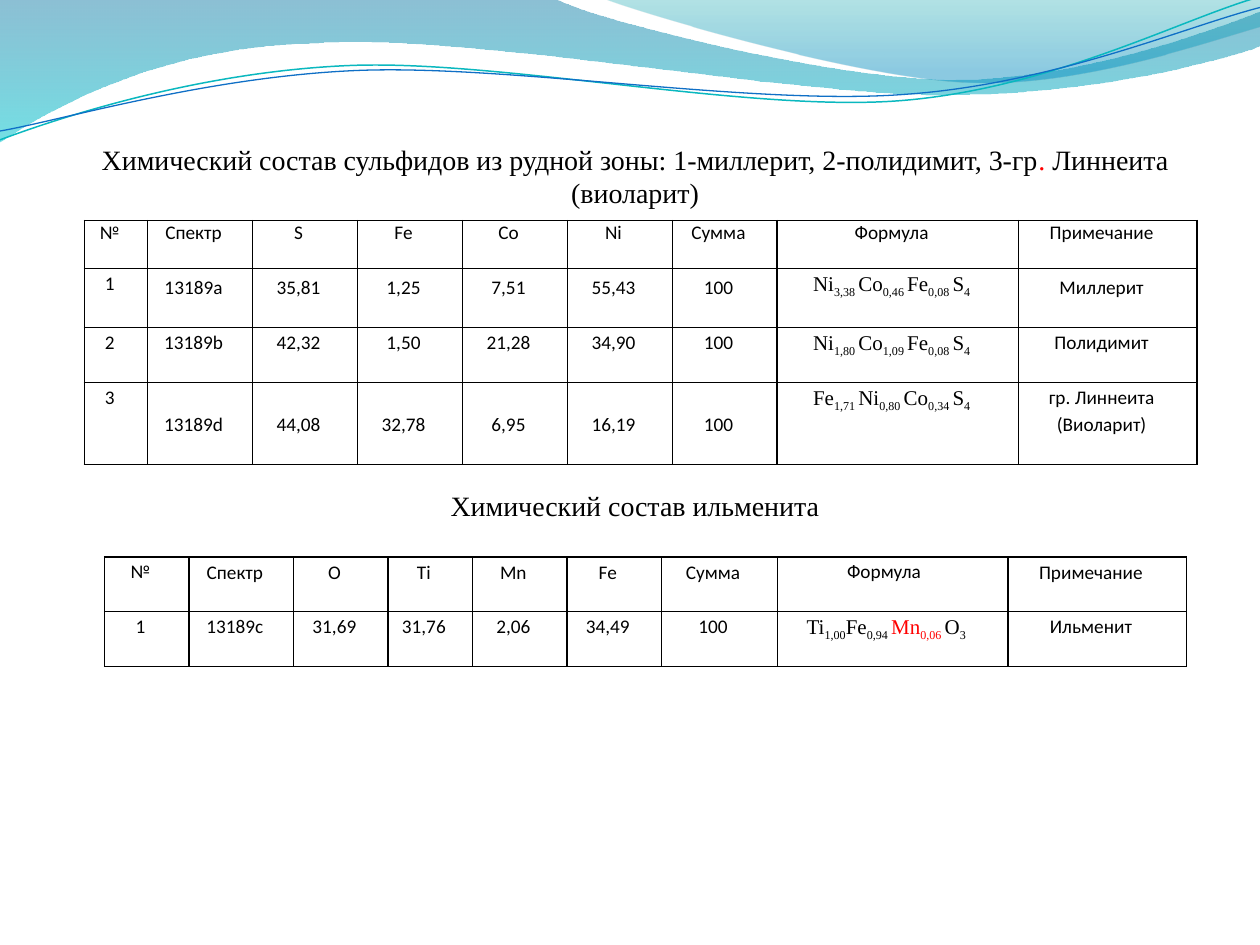
from math import cos, radians, sin

from lxml import etree
from pptx import Presentation
from pptx.dml.color import RGBColor
from pptx.enum.text import MSO_ANCHOR, PP_ALIGN
from pptx.oxml.ns import qn
from pptx.util import Inches, Pt

CENTER = PP_ALIGN.CENTER
TOP, BOTTOM = MSO_ANCHOR.TOP, MSO_ANCHOR.BOTTOM
COLORS = {
    "text": "000000", "accent": "FF0000", "teal_line": "0AB8BF", "blue_line": "0F6FC6",
    "back_top": "0074A1", "back_bottom": "00C6CF",
    "front_top": "00A1A9", "front_bottom": "008BBF",
}
SERIF, SANS = "Times New Roman", "Calibri"
TILT = 2.7

BACK_WAVE = [
    (0, 0), (4.4, -0.01), (4.76, 0.17, 6.64, 0.63, 7.58, 0.63),
    (8.53, 0.63, 9.58, 0.26, 10, 0.09), (10.01, 0.36),
    (9.83, 0.44, 8.7, 0.76, 7.46, 0.75), (6.22, 0.75, 3.82, 0.28, 2.57, 0.34),
    (1.29, 0.36, 0.46, 0.83, -0.01, 1.13), (0, 0),
]
FRONT_WAVE = [
    (4.79, -0.01), (5.09, 0.11, 6.82, 0.62, 7.69, 0.65),
    (8.56, 0.69, 9.61, 0.32, 10, 0.21), (10, 0), (4.79, -0.01),
]
TEAL_CURVE = [
    (0, 1.11), (0.48, 0.93, 1.58, 0.57, 2.77, 0.52),
    (3.95, 0.47, 5.93, 0.89, 7.13, 0.8), (8.33, 0.71, 9.38, 0.15, 9.98, -0.02),
]
BLUE_CURVE = [
    (0, 1.04), (0.47, 0.96, 1.64, 0.61, 2.83, 0.56),
    (4.03, 0.51, 5.97, 0.84, 7.17, 0.75), (8.36, 0.67, 9.41, 0.21, 10, 0.06),
]


def color(name):
    return RGBColor.from_string(COLORS[name])


def write_text(frame, paragraphs, size=11, font=SANS, spacing=1.0):
    for index, runs in enumerate(paragraphs):
        paragraph = frame.paragraphs[0] if index == 0 else frame.add_paragraph()
        paragraph.alignment = CENTER
        paragraph.line_spacing = spacing
        for text, color_name, baseline in runs:
            run = paragraph.add_run()
            run.text = text
            run.font.size = Pt(size)
            run.font.name = font
            run.font.color.rgb = color(color_name)
            if baseline:
                run._r.get_or_add_rPr().set("baseline", str(baseline * 1000))


def plain(text, color_name="text"):
    return (text, color_name, 0)


def formula(*parts, accent=None):
    runs = []
    for element, amount in parts:
        color_name = "accent" if element == accent else "text"
        runs += [(element, color_name, 0), (amount, color_name, -25)]
    return runs


def add_outline(slide, segments, close):
    points = [pair for segment in segments for pair in zip(segment[::2], segment[1::2])]
    points = [(Inches(x), Inches(y)) for x, y in points]
    builder = slide.shapes.build_freeform(*points[0])
    builder.add_line_segments(points[1:], close=close)
    shape = builder.convert_to_shape()
    shape.shadow.inherit = False
    steps = list(shape._element.spPr.iter(qn("a:lnTo")))
    for segment in segments[1:]:
        step = steps.pop(0)
        if len(segment) == 6:
            curve = etree.Element(qn("a:cubicBezTo"))
            step.addprevious(curve)
            for line in [step, steps.pop(0), steps.pop(0)]:
                curve.append(line[0])
                line.getparent().remove(line)
    return shape


def add_wave(slide, segments, stops):
    shape = add_outline(slide, segments, True)
    shape.line.fill.background()
    shape.fill.gradient()
    shape.fill.gradient_angle = 270
    for stop, (position, color_name, opacity) in zip(shape.fill.gradient_stops, stops):
        stop.position = position
        stop.color.rgb = color(color_name)
    for element, (_, _, opacity) in zip(shape._element.spPr.iter(qn("a:srgbClr")), stops):
        etree.SubElement(element, qn("a:alpha"), val=str(opacity * 1000))


def tilt(segments, center_x, center_y):
    cosine, sine = cos(radians(TILT)), sin(radians(TILT))
    tilted = []
    for segment in segments:
        values = []
        for x, y in zip(segment[::2], segment[1::2]):
            across, down = x - center_x, y - center_y
            values += [center_x + across * cosine - down * sine,
                       center_y + across * sine + down * cosine]
        tilted.append(values)
    return tilted


def add_curve(slide, segments, center, color_name, width):
    shape = add_outline(slide, tilt(segments, *center), False)
    shape.rotation = 360 - TILT
    shape.fill.background()
    shape.line.color.rgb = color(color_name)
    shape.line.width = Pt(width)


def add_title(slide, box, runs):
    frame = slide.shapes.add_textbox(*map(Inches, box)).text_frame
    frame.word_wrap = True
    write_text(frame, [runs], size=16, font=SERIF)


def set_borders(cell):
    properties = cell._tc.get_or_add_tcPr()
    for side in ("lnL", "lnR", "lnT", "lnB"):
        line = etree.SubElement(properties, qn(f"a:{side}"), w=str(Pt(1)))
        fill = etree.SubElement(line, qn("a:solidFill"))
        etree.SubElement(fill, qn("a:srgbClr"), val=COLORS["text"])


def fill_cell(cell, content, top_anchored, spacing):
    set_borders(cell)
    cell.fill.background()
    cell.margin_left, cell.margin_right = Inches(0.02), Inches(0.12)
    cell.margin_top = 0
    cell.margin_bottom = 0 if top_anchored else Inches(0.19 * spacing)
    cell.vertical_anchor = TOP if top_anchored else BOTTOM
    if isinstance(content, list):
        write_text(cell.text_frame, [content], size=12, font=SERIF, spacing=spacing)
    else:
        paragraphs = [[plain(line)] for line in content.split("\n")]
        write_text(cell.text_frame, paragraphs, spacing=spacing)


def add_grid(slide, left, top, widths, heights, rows, header_spacing):
    frame = slide.shapes.add_table(
        len(rows), len(widths), Inches(left), Inches(top),
        Inches(sum(widths)), Inches(sum(heights)),
    )
    table = frame.table
    table.first_row = table.horz_banding = False
    for column, width in zip(table.columns, widths):
        column.width = Inches(width)
    for row, height in zip(table.rows, heights):
        row.height = Inches(height)
    for row_index, values in enumerate(rows):
        spacing = 1.15 if row_index else header_spacing
        for column_index, content in enumerate(values):
            top_anchored = column_index in (0, len(values) - 2)
            fill_cell(table.cell(row_index, column_index), content, top_anchored, spacing)


def main():
    presentation = Presentation()
    presentation.slide_width, presentation.slide_height = Inches(10), Inches(7.5)
    slide = presentation.slides.add_slide(presentation.slide_layouts[6])

    add_wave(slide, BACK_WAVE, [(0, "back_top", 45), (1, "back_bottom", 55)])
    add_wave(slide, FRONT_WAVE, [(0, "front_top", 30), (0.8, "front_bottom", 45)])
    add_curve(slide, TEAL_CURVE, (4.99, 0.58), "teal_line", 0.85)
    add_curve(slide, BLUE_CURVE, (5, 0.59), "blue_line", 0.75)

    sulfides = [
        ["№", "Спектр", "S", "Fe", "Co", "Ni", "Сумма", "Формула", "Примечание"],
        ["1", "13189a", "35,81", "1,25", "7,51", "55,43", "100",
         formula(("Ni", "3,38 "), ("Co", "0,46 "), ("Fe", "0,08 "), ("S", "4")), "Миллерит"],
        ["2", "13189b", "42,32", "1,50", "21,28", "34,90", "100",
         formula(("Ni", "1,80 "), ("Co", "1,09 "), ("Fe", "0,08 "), ("S", "4")), "Полидимит"],
        ["3", "13189d", "44,08", "32,78", "6,95", "16,19", "100",
         formula(("Fe", "1,71 "), ("Ni", "0,80 "), ("Co", "0,34 "), ("S", "4")),
         "гр. Линнеита\n(Виоларит)"],
    ]
    add_grid(slide, 0.67, 1.75, [0.5] + [5 / 6] * 6 + [23 / 12, 17 / 12],
             [0.38, 0.47, 0.43, 0.65], sulfides, 1.0)

    ilmenite = [
        ["№", "Спектр", "O", "Ti", "Mn", "Fe", "Сумма", "Формула ", "Примечание"],
        ["1", "13189c", "31,69", "31,76", "2,06", "34,49", "100",
         formula(("Ti", "1,00"), ("Fe", "0,94 "), ("Mn", "0,06 "), ("O", "3"), accent="Mn"),
         "Ильменит"],
    ]
    add_grid(slide, 0.83, 4.42, [0.67, 0.83, 0.75, 0.67, 0.75, 0.75, 0.92, 1.83, 1.42],
             [0.43, 0.43], ilmenite, 1.15)

    add_title(slide, (0.58, 1.08, 8.92, 0.94), [
        plain("Химический состав сульфидов из рудной зоны: 1-миллерит, 2-полидимит, 3-гр"),
        plain(". ", "accent"),
        plain("Линнеита (виоларит)"),
    ])
    add_title(slide, (1.58, 3.83, 6.92, 0.67), [plain("Химический состав ильменита")])
    presentation.save("out.pptx")


if __name__ == "__main__":
    main()
